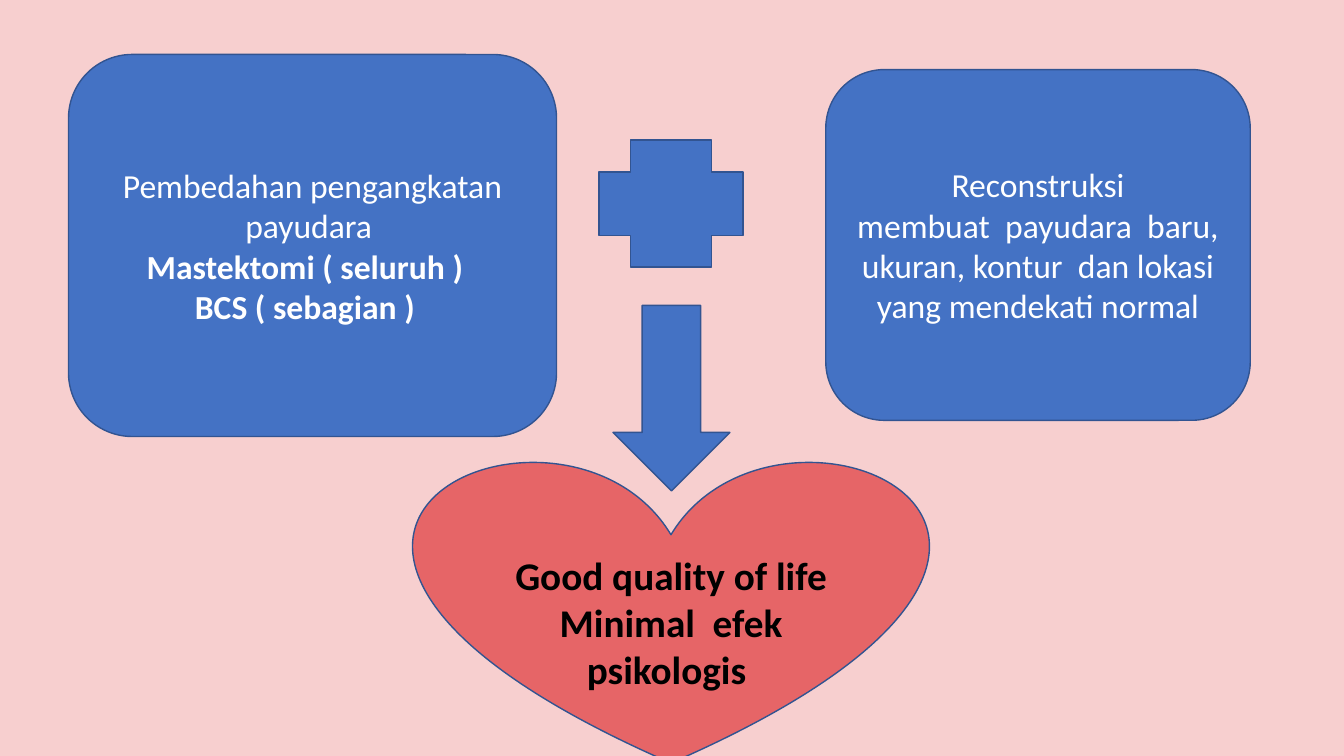
from pptx import Presentation
from pptx.dml.color import RGBColor
from pptx.enum.shapes import MSO_SHAPE as Preset
from pptx.enum.text import MSO_ANCHOR as Anchor, PP_ALIGN as Align
from pptx.util import Inches, Pt

COLORS = {
    "background": "F7CFCF",
    "blue": "4472C4",
    "outline": "325491",
    "heart": "E66567",
    "white": "FFFFFF",
    "black": "000000",
}


def color(name):
    return RGBColor.from_string(COLORS[name])


def add_figure(slide, preset, left, top, width, height, fill="blue"):
    shape = slide.shapes.add_shape(
        preset, Inches(left), Inches(top), Inches(width), Inches(height))
    shape.shadow.inherit = False
    shape.fill.solid()
    shape.fill.fore_color.rgb = color(fill)
    shape.line.color.rgb = color("outline")
    shape.line.width = Pt(1)
    return shape


def write_lines(shape, lines, size, font_color, bold_from):
    frame = shape.text_frame
    frame.word_wrap = True
    frame.vertical_anchor = Anchor.MIDDLE
    frame.text = "\n".join(lines)
    for index, paragraph in enumerate(frame.paragraphs):
        paragraph.alignment = Align.CENTER
        for run in paragraph.runs:
            run.font.name = "Calibri"
            run.font.size = Pt(size)
            run.font.bold = index >= bold_from
            run.font.color.rgb = color(font_color)


def main():
    presentation = Presentation()
    presentation.slide_width = Inches(13.33)
    presentation.slide_height = Inches(7.5)
    slide = presentation.slides.add_slide(presentation.slide_layouts[6])
    slide.background.fill.solid()
    slide.background.fill.fore_color.rgb = color("background")

    surgery = add_figure(slide, Preset.ROUNDED_RECTANGLE, 0.68, 0.54, 4.84, 3.79)
    write_lines(surgery, [
        "Pembedahan pengangkatan payudara ",
        "Mastektomi ( seluruh )  ",
        "BCS ( sebagian )  ",
    ], 24, "white", bold_from=1)

    add_figure(slide, Preset.CROSS, 5.94, 1.39, 1.43, 1.26)

    reconstruction = add_figure(slide, Preset.ROUNDED_RECTANGLE, 8.19, 0.69, 4.21, 3.48)
    write_lines(reconstruction, [
        "Reconstruksi",
        "membuat  payudara  baru, ukuran, kontur  dan lokasi yang mendekati normal",
    ], 24, "white", bold_from=2)

    add_figure(slide, Preset.DOWN_ARROW, 6.08, 3.03, 1.16, 1.84)

    heart = add_figure(slide, Preset.HEART, 4.11, 4.55, 5.09, 3.02, "heart")
    write_lines(heart, [
        "Good quality of life",
        "Minimal  efek psikologis ",
    ], 28, "black", bold_from=0)
    heart.text_frame.margin_top = Inches(0.52)

    presentation.save("out.pptx")


if __name__ == "__main__":
    main()
